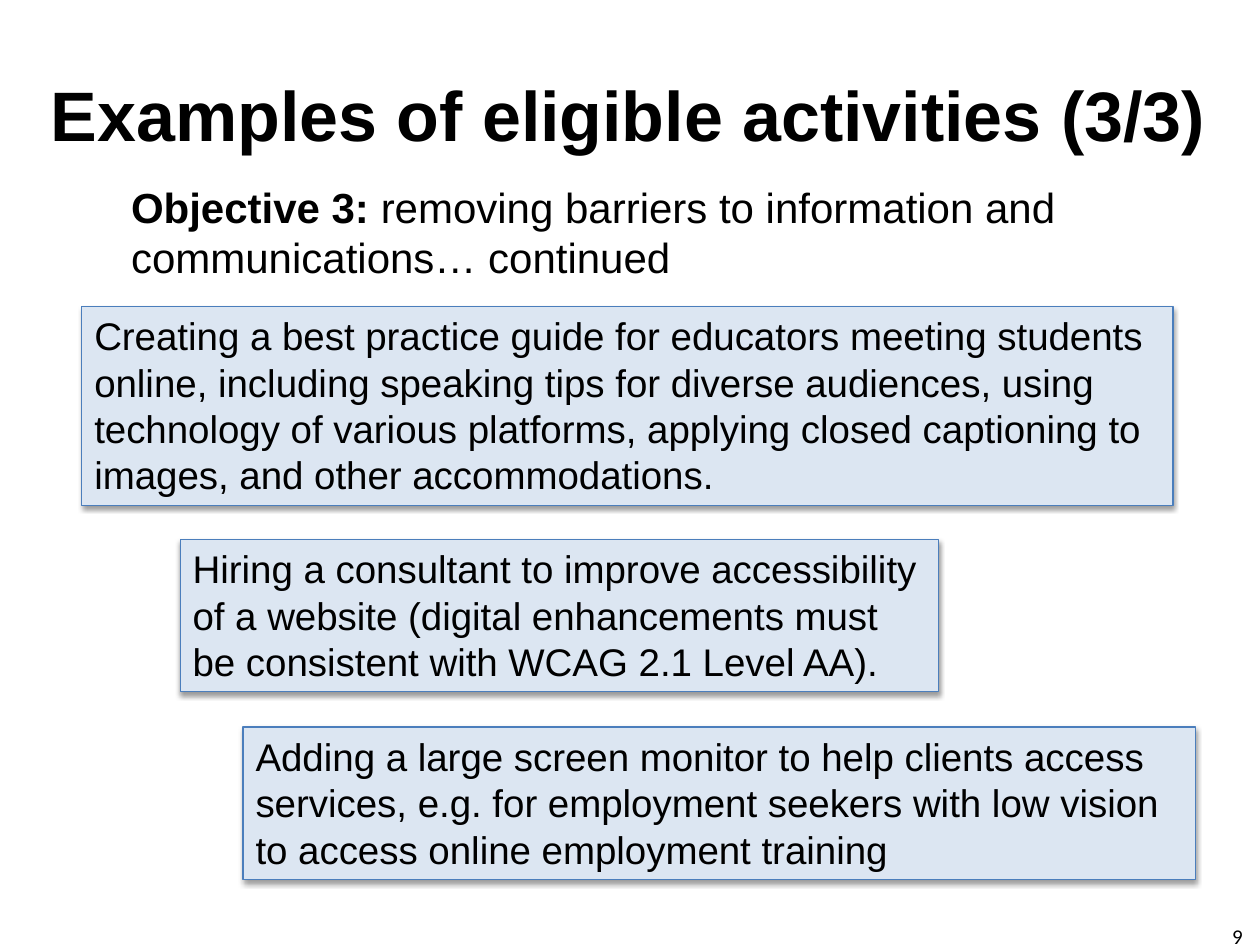
from lxml.etree import SubElement
from pptx import Presentation
from pptx.dml.color import RGBColor
from pptx.enum.shapes import MSO_SHAPE
from pptx.enum.text import MSO_ANCHOR, PP_ALIGN
from pptx.oxml.ns import qn
from pptx.util import Inches, Pt

ACTIVITIES = [
    ((0.65, 2.43, 8.66, 1.58),
     "Creating a best practice guide for educators meeting students online, "
     "including speaking tips for diverse audiences, using technology of various "
     "platforms, applying closed captioning to images, and other accommodations."),
    ((1.43, 4.28, 6.02, 1.21),
     "Hiring a consultant to improve accessibility of a website (digital "
     "enhancements must be consistent with WCAG 2.1 Level AA)."),
    ((1.93, 5.77, 7.56, 1.21),
     "Adding a large screen monitor to help clients access services, e.g. for "
     "employment seekers with low vision to access online employment training"),
]


def color(value):
    return RGBColor.from_string(value)


def set_attributes(target, values):
    for name, value in values.items():
        setattr(target, name, value)


def place(shape, box):
    names = ("left", "top", "width", "height")
    set_attributes(shape, dict(zip(names, map(Inches, box))))


def write_text(shape, runs, size, font_name="Arial", align=PP_ALIGN.LEFT, **frame_format):
    frame = shape.text_frame
    set_attributes(frame, {"word_wrap": True, **frame_format})
    paragraph = frame.paragraphs[0]
    paragraph.alignment = align
    for text, bold in runs:
        run = paragraph.add_run()
        run.text = text
        set_attributes(run.font, {"name": font_name, "size": Pt(size), "bold": bold})
        run.font.color.rgb = color("000000")


def add_title(slide, text):
    title = slide.shapes.title
    place(title, (0.13, 0.42, 9.71, 0.96))
    write_text(title, [(text, True)], 40, align=PP_ALIGN.CENTER,
               vertical_anchor=MSO_ANCHOR.MIDDLE)


def add_text(slide, box, runs, size, **text_format):
    text_box = slide.shapes.add_textbox(*map(Inches, box))
    write_text(text_box, runs, size, **text_format)


def add_shadow(shape):
    shape.shadow.inherit = False
    effects = shape._element.spPr.find(qn("a:effectLst"))
    shadow = SubElement(effects, qn("a:outerShdw"), blurRad=str(Pt(3.1)),
                        dist=str(Pt(1.6)), dir="5400000", rotWithShape="0")
    shadow_color = SubElement(shadow, qn("a:srgbClr"), val="000000")
    SubElement(shadow_color, qn("a:alpha"), val="38000")


def add_activity(slide, box, text):
    shape = slide.shapes.add_shape(MSO_SHAPE.RECTANGLE, *map(Inches, box))
    shape.fill.solid()
    shape.fill.fore_color.rgb = color("DCE6F2")
    shape.line.color.rgb = color("4B7EBC")
    shape.line.width = Pt(0.75)
    add_shadow(shape)
    write_text(shape, [(text, False)], 22, vertical_anchor=MSO_ANCHOR.TOP)


def main():
    presentation = Presentation()
    set_attributes(presentation, {"slide_width": Inches(10), "slide_height": Inches(7.5)})
    slide = presentation.slides.add_slide(presentation.slide_layouts[5])
    add_title(slide, "Examples of eligible activities (3/3)")
    objective = [("Objective 3: ", True),
                 ("removing barriers to information and communications… continued", False)]
    add_text(slide, (0.99, 1.39, 7.9, 1.08), objective, 24,
             margin_left=Inches(0.05), margin_right=Inches(0.05))
    for box, text in ACTIVITIES:
        add_activity(slide, box, text)
    add_text(slide, (9.68, 7.28, 0.4, 0.4), [("9", False)], 12, font_name="Calibri")
    presentation.save("out.pptx")


if __name__ == "__main__":
    main()
